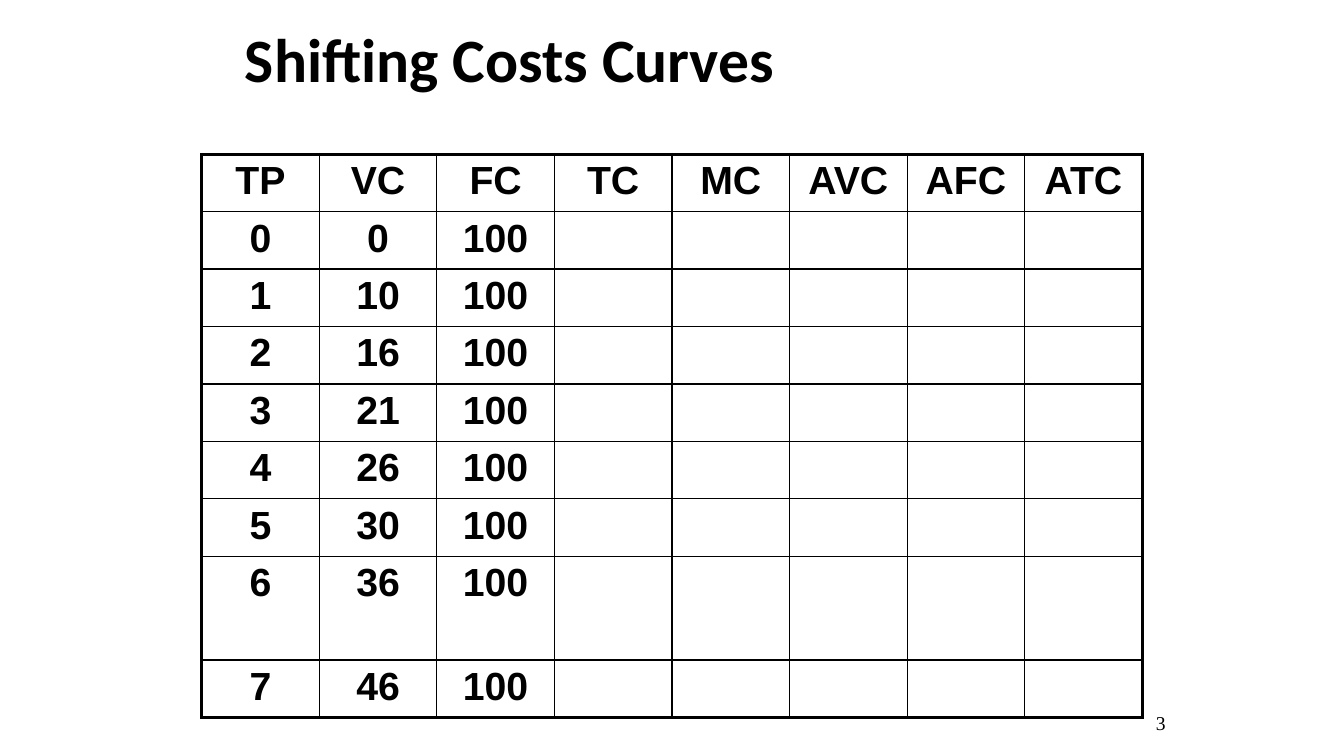
from lxml.etree import SubElement
from pptx import Presentation
from pptx.dml.color import RGBColor
from pptx.enum.text import MSO_ANCHOR, PP_ALIGN
from pptx.oxml.ns import qn
from pptx.util import Inches, Pt

HEADS = ["TP", "VC", "FC", "TC", "MC", "AVC", "AFC", "ATC"]
COSTS = [0, 10, 16, 21, 26, 30, 36, 46]
FIXED = 100
INK, PAPER = "000000", "FFFFFF"
THIN, THICK = 1, 2.25


def color(code):
    return RGBColor.from_string(code)


def style(para, font, size, bold, align):
    para.alignment = align
    para.font.name = font
    para.font.size = Pt(size)
    para.font.bold = bold
    para.font.color.rgb = color(INK)


def place(shape, box):
    shape.left, shape.top, shape.width, shape.height = map(Inches, box)


def add_title(slide, box):
    title = slide.shapes.title
    place(title, box)
    frame = title.text_frame
    frame.text = "Shifting Costs Curves"
    frame.vertical_anchor = MSO_ANCHOR.MIDDLE
    para = frame.paragraphs[0]
    para.line_spacing = 0.9
    style(para, "Calibri", 44, True, PP_ALIGN.LEFT)


def set_border(cell, widths):
    """Draw the left, right, top and bottom edges in the given point widths."""
    props = cell._tc.get_or_add_tcPr()
    for spot, (side, width) in enumerate(zip("LRTB", widths)):
        line = SubElement(props, qn(f"a:ln{side}"), w=str(Pt(width)))
        fill = SubElement(line, qn("a:solidFill"))
        SubElement(fill, qn("a:srgbClr"), val=INK)
        props.insert(spot, line)


def add_costs(slide, box):
    rows = [HEADS] + [[str(n), str(cost), str(FIXED)] for n, cost in enumerate(COSTS)]
    high, wide = len(rows), len(HEADS)
    table = slide.shapes.add_table(high, wide, *map(Inches, box)).table
    table.first_row = table.horz_banding = False
    for col in table.columns:
        col.width = Inches(box[2] / wide)
    for r, row in enumerate(rows):
        table.rows[r].height = Inches(1.03 if r == high - 2 else 0.57)
        for c in range(wide):
            cell = table.cell(r, c)
            if c < HEADS.index("AVC"):
                cell.fill.background()
            else:
                cell.fill.solid()
                cell.fill.fore_color.rgb = color(PAPER)
            edges = (c == 0, c == wide - 1, r == 0, r == high - 1)
            set_border(cell, [THICK if edge else THIN for edge in edges])
            if c < len(row):
                cell.text_frame.text = row[c]
                style(cell.text_frame.paragraphs[0], "Arial", 28, True, PP_ALIGN.CENTER)


def add_number(slide, box):
    frame = slide.shapes.add_textbox(*map(Inches, box)).text_frame
    frame.word_wrap = True
    frame.text = "3"
    style(frame.paragraphs[0], "Times New Roman", 14, False, PP_ALIGN.RIGHT)


def main():
    deck = Presentation()
    deck.slide_width, deck.slide_height = Inches(13.33), Inches(7.5)
    slide = deck.slides.add_slide(deck.slide_layouts[5])
    add_title(slide, (2.33, 0, 8.5, 1.25))
    add_costs(slide, (2, 1.53, 9.33, 5.57))
    add_number(slide, (9.58, 7, 2.08, 0.5))
    deck.save("out.pptx")


if __name__ == "__main__":
    main()
